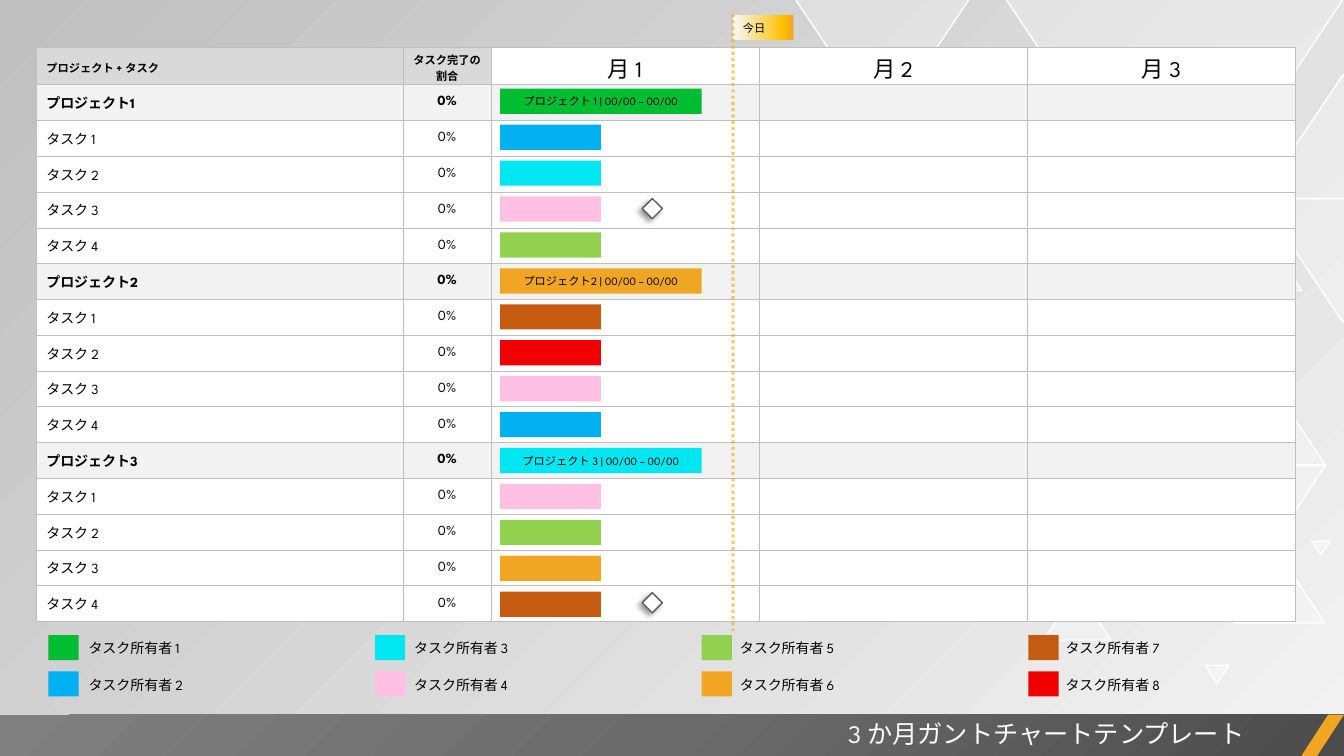
from pptx import Presentation
from pptx.dml.color import RGBColor
from pptx.enum.dml import MSO_LINE
from pptx.enum.shapes import MSO_CONNECTOR, MSO_SHAPE
from pptx.enum.text import MSO_ANCHOR, PP_ALIGN
from pptx.oxml import parse_xml
from pptx.oxml.ns import nsdecls, qn
from pptx.util import Inches, Pt
from lxml.etree import SubElement

LEFT, CENTER, RIGHT = PP_ALIGN.LEFT, PP_ALIGN.CENTER, PP_ALIGN.RIGHT
OWNER_COLORS = ["00BD32", "00B0F0", "00E7F2", "FFC0E3",
                "92D050", "F0A622", "C55A11", "F10002"]


def paint(fill, color, alpha=100):
    fill.solid()
    fill.fore_color.rgb = RGBColor.from_string(color)
    if alpha < 100:
        clr = fill._xPr.find(".//" + qn("a:srgbClr"))
        SubElement(clr, qn("a:alpha")).set("val", str(alpha * 1000))


def draw(shapes, kind, box, color, alpha=100, line=None):
    sp = shapes.add_shape(kind, *[Inches(v) for v in box])
    sp.shadow.inherit = False
    paint(sp.fill, color, alpha)
    if line:
        paint(sp.line.fill, line)
        sp.line.width = Pt(1)
    else:
        sp.line.fill.background()
    return sp


prs = Presentation()
prs.slide_width, prs.slide_height = Inches(13.33), Inches(7.5)
s = prs.slides.add_slide(prs.slide_layouts[6])
texts = []

bg = s.background.fill
bg.gradient()
bg.gradient_angle = 135
for stop, color in zip(bg.gradient_stops, ["F2F2F2", "BFBFBF"]):
    stop.color.rgb = RGBColor.from_string(color)

triangles = [
    (9.04, 1.33, 1.64, 1.23, 0), (9.04, 2.56, 1.64, 1.23, 180),
    (9.97, 2.67, 1.64, 1.23, 0), (9.97, 3.9, 1.64, 1.23, 180),
    (9.97, -0.02, 3.36, 2.52, 180), (12.24, 5.5, 0.9, 0.68, 0),
    (11.73, 5.44, 0.9, 0.68, 180), (11.73, 4.77, 0.9, 0.68, 0),
    (11.74, 3.2, 0.9, 0.68, 0), (11.74, 3.88, 0.9, 0.68, 180),
    (12.25, 3.94, 0.9, 0.68, 0), (12.25, 4.61, 0.9, 0.68, 180),
    (10.35, 5.85, 0.67, 0.5, 0), (9.62, 5.12, 0.67, 0.5, 180),
    (9.62, 4.62, 0.67, 0.5, 0), (12.5, 0.74, 1.64, 1.23, 0),
    (12.5, 1.97, 1.64, 1.23, 180), (10.94, 5.44, 0.44, 0.33, 180),
    (9.27, 3.76, 0.44, 0.33, 0), (11.55, 4.28, 0.24, 0.18, 0),
    (11.95, 6.6, 0.24, 0.18, 180), (8.92, 1.81, 0.24, 0.18, 180),
    (12.67, 2.7, 0.24, 0.18, 0), (9.71, 0.47, 0.18, 0.13, 0),
    (13.01, 5.37, 0.18, 0.13, 180), (10.38, 1.39, 0.44, 0.33, 0),
    (7.88, -0.02, 1.74, 1.3, 180),
]
pattern = s.shapes.add_group_shape()
for *box, rotation in triangles:
    sp = draw(pattern.shapes, MSO_SHAPE.ISOSCELES_TRIANGLE, box, "FFFFFF", 30, "FFFFFF")
    sp.rotation = rotation

banner = draw(s.shapes, MSO_SHAPE.RECTANGLE, (0, 7.09, 13.33, 0.42), "6B6B6B")
accent = draw(s.shapes, MSO_SHAPE.PARALLELOGRAM, (12.9, 7.09, 0.43, 0.42), "F0A622")
accent.adjustments[0] = 0.65
title = s.shapes.add_textbox(Inches(5.25), Inches(7.08), Inches(7.19), Inches(0.4))
texts.append((title.text_frame, "3 か月ガントチャートテンプレート", 18, "FFFFFF", False, RIGHT))

frame = s.shapes.add_table(16, 5, Inches(0.36), Inches(0.47), Inches(12.49), Inches(5.7))
table = frame.table
table.first_row = table.horz_banding = False
for col, width in zip(table.columns, [3.64, 0.87, 2.66, 2.66, 2.66]):
    col.width = Inches(width)
for i, row in enumerate(table.rows):
    row.height = Inches(0.37 if i == 0 else (5.7 - 0.37) / 15)
    project, task = divmod(i - 1, 5)
    is_project = i > 0 and task == 0
    name = f"プロジェクト{project + 1}" if is_project else f"タスク {task}"
    labels = [name, "0%", "", "", ""]
    if i == 0:
        labels = ["プロジェクト + タスク", "タスク完了の割合", "月 1", "月 2", "月 3"]
    for j, (cell, label) in enumerate(zip(row.cells, labels)):
        cell.vertical_anchor = MSO_ANCHOR.MIDDLE
        if i == 0:
            cell.margin_top, cell.margin_bottom = Inches(0.03), 0
            if j == 1:
                cell.margin_left = cell.margin_right = Inches(0.08)
        tcPr = cell._tc.get_or_add_tcPr()
        for k, side in enumerate(["lnL", "lnR", "lnT", "lnB"]):
            tcPr.insert(k, parse_xml(
                f'<a:{side} {nsdecls("a")} w="6350"><a:solidFill>'
                f'<a:srgbClr val="BFBFBF"/></a:solidFill></a:{side}>'))
        if is_project:
            paint(cell.fill, "F2F2F2")
        elif j > 1:
            paint(cell.fill, "FFFFFF", 75 if i == 0 else 50)
        else:
            paint(cell.fill, "D9D9D9" if i == 0 else "FFFFFF")
        size = 10 if i else 16 if j > 1 else 8
        bold = is_project or (i == 0 and j < 2)
        texts.append((cell.text_frame, label, size, "000000", bold, CENTER if j else LEFT))

bar_owners = [1, 2, 3, 4, 5, 6, 7, 8, 4, 2, 3, 4, 5, 6, 7]
bar_labels = ["プロジェクト 1 | 00/00 – 00/00", "プロジェクト2 | 00/00 – 00/00",
              "プロジェクト 3 | 00/00 – 00/00"]
for i, owner in enumerate(bar_owners):
    is_project = i % 5 == 0
    box = (4.96, 0.88 + i * (5.87 - 0.88) / 14, 2 if is_project else 1, 0.25)
    bar = draw(s.shapes, MSO_SHAPE.RECTANGLE, box, OWNER_COLORS[owner - 1])
    if is_project:
        texts.append((bar.text_frame, bar_labels[i // 5], 8, "000000", False, CENTER))

for i, color in enumerate(OWNER_COLORS):
    col, row = divmod(i, 2)
    y = 6.3 + 0.36 * row
    draw(s.shapes, MSO_SHAPE.RECTANGLE, (0.48 + 3.24 * col, y, 0.3, 0.25), color)
    tb = s.shapes.add_textbox(Inches(0.78 + 3.23 * col), Inches(y), Inches(2.4), Inches(0.27))
    texts.append((tb.text_frame, f"タスク所有者 {i + 1}", 10, "000000", False, LEFT))

for y in (1.97, 5.88):
    milestone = draw(s.shapes, MSO_SHAPE.DIAMOND, (6.37, y, 0.2, 0.2), "FFFFFF", line="595959")
    milestone.element.spPr.find(qn("a:effectLst")).append(parse_xml(
        f'<a:outerShdw {nsdecls("a")} blurRad="50800" dist="38100" dir="8100000">'
        '<a:srgbClr val="000000"><a:alpha val="40000"/></a:srgbClr></a:outerShdw>'))

today = s.shapes.add_group_shape()
flag = draw(today.shapes, MSO_SHAPE.RECTANGLE, (7.27, 0.15, 0.6, 0.25), "FFC000")
texts.append((flag.text_frame, "今日", 8, "000000", False, LEFT))
line = today.shapes.add_connector(MSO_CONNECTOR.STRAIGHT, Inches(7.27), Inches(0.14),
                                  Inches(7.27), Inches(6.26))
paint(line.line.fill, "F0A622", 60)
line.line.width = Pt(2.25)
line.line.dash_style = MSO_LINE.ROUND_DOT
SubElement(line.element.spPr, qn("a:effectLst"))

gradients = [
    (banner, [(0, "4C4C4C"), (50, "6B6B6B"), (100, "808080")],
     '<a:path path="circle"><a:fillToRect l="100000" t="100000"/></a:path>'),
    (flag, [(0, "F7FAFD"), (83, "FFC000"), (100, "F0A622")], '<a:lin ang="0"/>'),
]
for sp, stops, direction in gradients:
    gs = "".join(f'<a:gs pos="{pos * 1000}"><a:srgbClr val="{color}"/></a:gs>'
                 for pos, color in stops)
    spPr = sp.element.spPr
    spPr.replace(spPr.find(qn("a:solidFill")), parse_xml(
        f'<a:gradFill {nsdecls("a")}><a:gsLst>{gs}</a:gsLst>{direction}</a:gradFill>'))

for tf, text, size, color, bold, align in texts:
    tf.word_wrap = True
    p = tf.paragraphs[0]
    p.text = text
    p.alignment = align
    if not text:
        p._p.get_or_add_endParaRPr().set("sz", str(size * 100))
    for r in p.runs:
        r.font.name = "League Spartan"
        r.font.size = Pt(size)
        r.font.bold = bold
        paint(r.font.fill, color)

prs.save("out.pptx")
